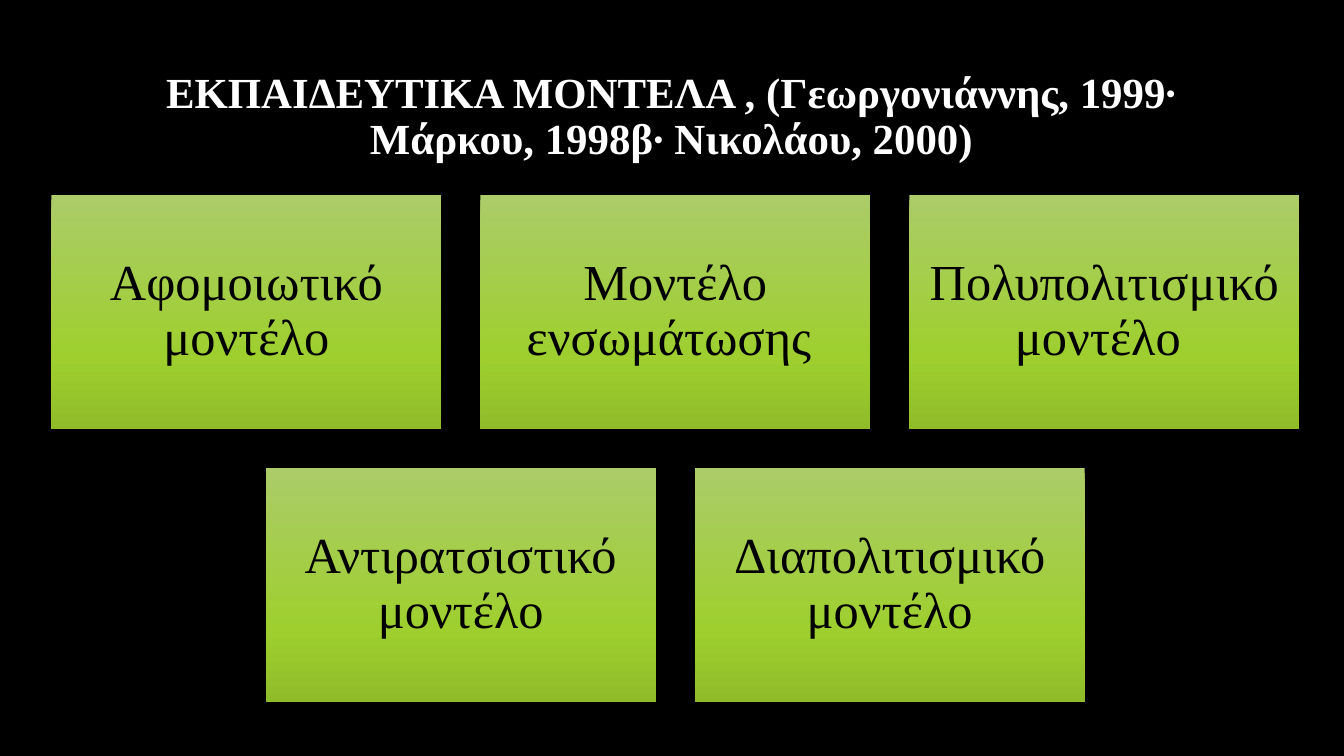
from pptx import Presentation
from pptx.dml.color import RGBColor
from pptx.enum.shapes import MSO_SHAPE
from pptx.enum.text import MSO_ANCHOR, PP_ALIGN
from pptx.oxml import parse_xml
from pptx.oxml.ns import nsdecls
from pptx.util import Pt

RECTANGLE = MSO_SHAPE.RECTANGLE
MIDDLE = MSO_ANCHOR.MIDDLE
CENTER = PP_ALIGN.CENTER

SLIDE_WIDTH, SLIDE_HEIGHT = 960, 540
BOX_WIDTH, BOX_HEIGHT, GAP = 278.6, 167.2, 27.8
ROWS_TOP, ROWS_CENTER = 139.2, 482.4
GRADIENT_STOPS = [(0, "ABCC69"), (69, "9ECF2E"), (100, "90BC2A")]

TITLE = "ΕΚΠΑΙΔΕΥΤΙΚΑ ΜΟΝΤΕΛΑ , (Γεωργονιάννης, 1999∙ Μάρκου, 1998β∙ Νικολάου, 2000)"
MODEL_ROWS = [
    ["Αφομοιωτικό μοντέλο", "Μοντέλο ενσωμάτωσης ", "Πολυπολιτισμικό μοντέλο "],
    ["Αντιρατσιστικό μοντέλο", "Διαπολιτισμικό μοντέλο"],
]


def write_text(shape, text, size, color, bold=False):
    frame = shape.text_frame
    frame.word_wrap = True
    frame.vertical_anchor = MIDDLE
    frame.text = text
    paragraph = frame.paragraphs[0]
    paragraph.alignment = CENTER
    paragraph.line_spacing = 0.9
    font = paragraph.runs[0].font
    font.name = "Times New Roman"
    font.size = Pt(size)
    font.bold = bold
    font.color.rgb = RGBColor.from_string(color)


def fill_gradient(shape, stops):
    """Fill the shape from top to bottom with (percent, colour) stops."""
    stop_xml = "".join(
        f'<a:gs pos="{percent * 1000}"><a:srgbClr val="{color}"/></a:gs>'
        for percent, color in stops
    )
    gradient = parse_xml(
        f'<a:gradFill {nsdecls("a")} rotWithShape="1"><a:gsLst>{stop_xml}</a:gsLst>'
        '<a:lin ang="5400000" scaled="0"/></a:gradFill>'
    )
    shape._element.spPr.insert(2, gradient)  # right after the geometry


presentation = Presentation()
presentation.slide_width = Pt(SLIDE_WIDTH)
presentation.slide_height = Pt(SLIDE_HEIGHT)
slide = presentation.slides.add_slide(presentation.slide_layouts[6])
background = slide.background.fill
background.solid()
background.fore_color.rgb = RGBColor.from_string("000000")

title = slide.shapes.add_textbox(Pt(72), Pt(31.6), Pt(815), Pt(104.4))
write_text(title, TITLE, 30.6, "FFFFFF", bold=True)

for row, models in enumerate(MODEL_ROWS):
    row_width = len(models) * (BOX_WIDTH + GAP) - GAP
    top = ROWS_TOP + row * (BOX_HEIGHT + GAP)
    for column, model in enumerate(models):
        left = ROWS_CENTER - row_width / 2 + column * (BOX_WIDTH + GAP)
        box = slide.shapes.add_shape(
            RECTANGLE, Pt(left), Pt(top), Pt(BOX_WIDTH), Pt(BOX_HEIGHT)
        )
        box.shadow.inherit = False
        box.line.fill.background()
        fill_gradient(box, GRADIENT_STOPS)
        frame = box.text_frame
        frame.margin_left = frame.margin_right = Pt(10.8)
        frame.margin_top = frame.margin_bottom = Pt(10.8)
        write_text(box, model, 36, "000000")

presentation.save("out.pptx")
